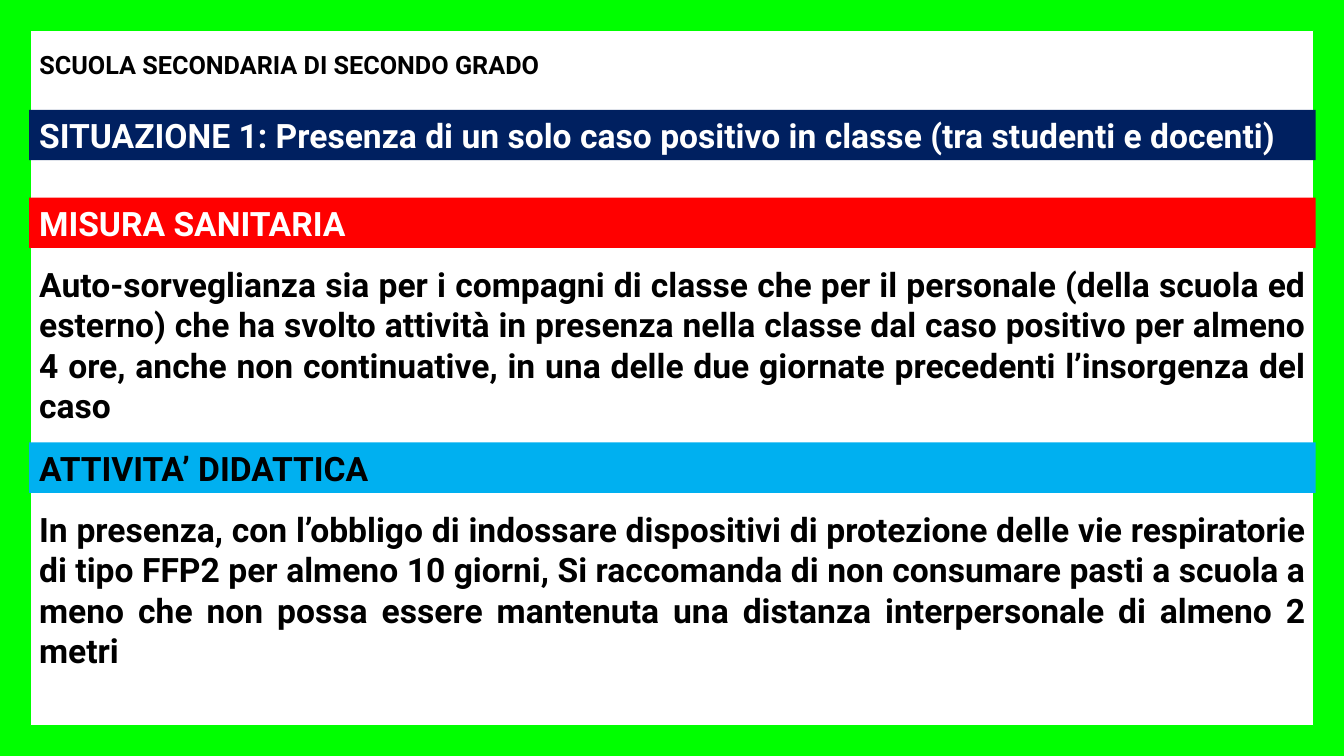
from pptx import Presentation
from pptx.dml.color import RGBColor
from pptx.enum.shapes import MSO_SHAPE
from pptx.enum.text import MSO_ANCHOR, MSO_AUTO_SIZE, PP_ALIGN
from pptx.util import Pt

FRAME, RECTANGLE = MSO_SHAPE.FRAME, MSO_SHAPE.RECTANGLE
LEFT, JUSTIFY = PP_ALIGN.LEFT, PP_ALIGN.JUSTIFY
TOP, GROW = MSO_ANCHOR.TOP, MSO_AUTO_SIZE.SHAPE_TO_FIT_TEXT

# Content
FONT = "Roboto"
COLORS = {"green": "00FF00", "navy": "002060", "red": "FF0000",
          "blue": "00B0F0", "black": "000000", "white": "FFFFFF"}
HEADING = "SCUOLA SECONDARIA DI SECONDO GRADO"
BANDS = [  # top, fill, text colour, text
    (109, "navy", "white",
     "SITUAZIONE 1: Presenza di un solo caso positivo in classe (tra studenti e docenti)"),
    (196, "red", "white", "MISURA SANITARIA"),
    (439, "blue", "black", "ATTIVITA’ DIDATTICA"),
]
MEASURES = [  # top, height, text
    (257, 172,
     "Auto-sorveglianza sia per i compagni di classe che per il personale (della scuola ed "
     "esterno) che ha svolto attività in presenza nella classe dal caso positivo per almeno "
     "4 ore, anche non continuative, in una delle due giornate precedenti l’insorgenza del caso"),
    (500, 131,
     "In presenza, con l’obbligo di indossare dispositivi di protezione delle vie respiratorie "
     "di tipo FFP2 per almeno 10 giorni, Si raccomanda di non consumare pasti a scuola a meno "
     "che non possa essere mantenuta una distanza interpersonale di almeno 2 metri"),
]

# Layout in px, 100 to the inch
PX = 9144
SLIDE_WIDTH, SLIDE_HEIGHT = 1333, 750
COLUMN_LEFT, COLUMN_WIDTH = 29, 1276
BAND_HEIGHT = 50
HEADING_TOP, HEADING_HEIGHT = 44, 40


def color(name):
    return RGBColor.from_string(COLORS[name])


def column_area(top, height):
    return [value * PX for value in (COLUMN_LEFT, top, COLUMN_WIDTH, height)]


def write(box, text, size, text_color, align):
    frame = box.text_frame
    frame.word_wrap = True
    frame.auto_size = GROW
    frame.vertical_anchor = TOP
    frame.text = text
    para = frame.paragraphs[0]
    para.alignment = align
    font = para.runs[0].font
    font.name, font.size, font.bold = FONT, Pt(size), True
    font.color.rgb = color(text_color)


def add_filled(page, kind, area, fill):
    shape = page.shapes.add_shape(kind, *area)
    shape.shadow.inherit = False
    shape.fill.solid()
    shape.fill.fore_color.rgb = color(fill)
    shape.line.fill.background()
    return shape


def main():
    deck = Presentation()
    deck.slide_width, deck.slide_height = SLIDE_WIDTH * PX, SLIDE_HEIGHT * PX
    page = deck.slides.add_slide(deck.slide_layouts[5])

    # Green border
    border = add_filled(page, FRAME, (0, 0, deck.slide_width, deck.slide_height), "green")
    border.adjustments[0] = 0.04
    border.line.color.rgb = color("green")
    border.line.width = Pt(1)

    # Heading
    title = page.shapes.title
    title.left, title.top, title.width, title.height = column_area(HEADING_TOP, HEADING_HEIGHT)
    write(title, HEADING, 18, "black", LEFT)

    # Coloured bands
    for top, fill, text_color, text in BANDS:
        band = add_filled(page, RECTANGLE, column_area(top, BAND_HEIGHT), fill)
        write(band, text, 24, text_color, LEFT)

    # Measures
    for top, height, text in MEASURES:
        box = page.shapes.add_textbox(*column_area(top, height))
        write(box, text, 24, "black", JUSTIFY)

    deck.save("out.pptx")


if __name__ == "__main__":
    main()
